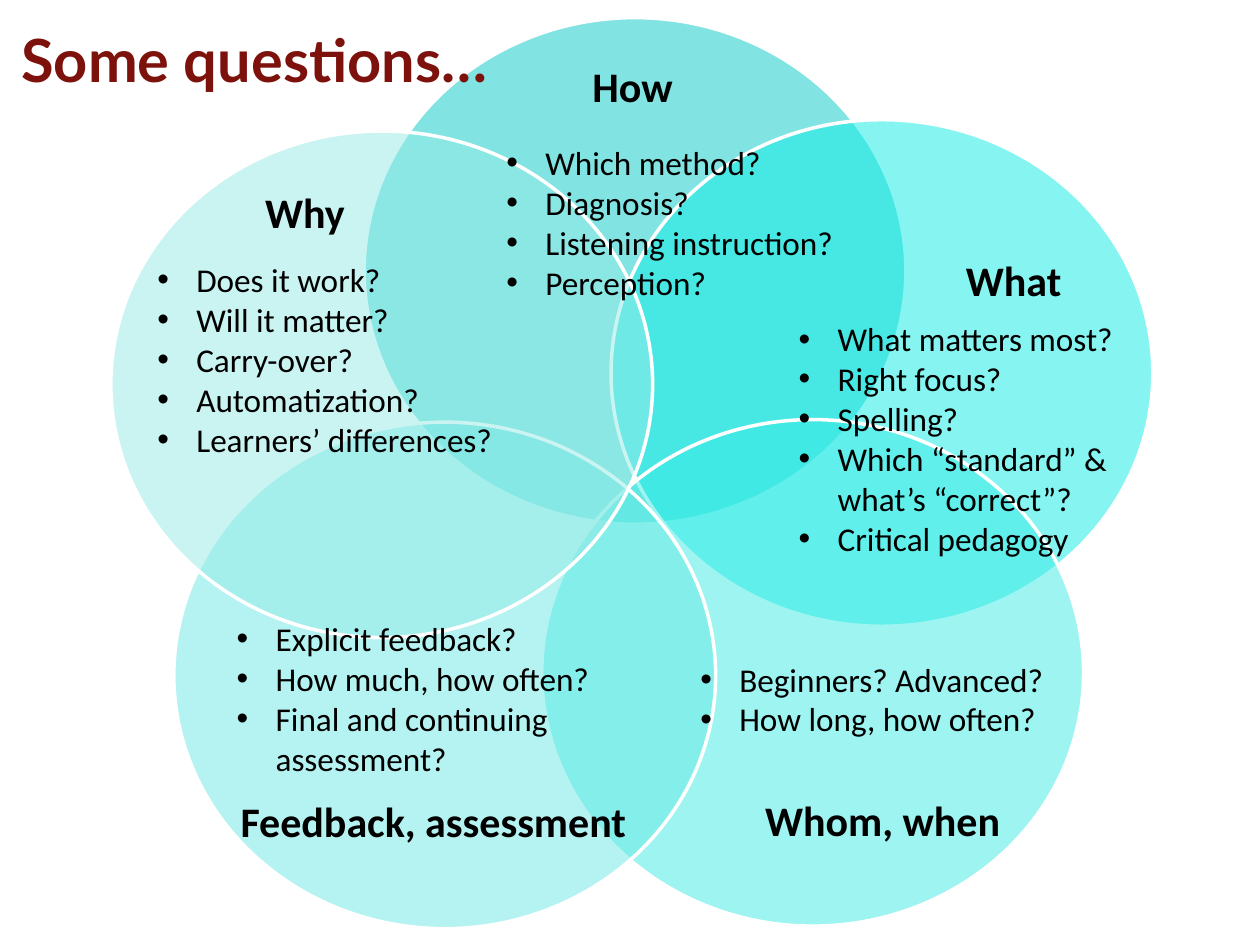
from lxml.etree import SubElement
from pptx import Presentation
from pptx.dml.color import RGBColor
from pptx.enum.shapes import MSO_SHAPE
from pptx.enum.text import MSO_ANCHOR, PP_ALIGN
from pptx.oxml.ns import qn
from pptx.util import Inches, Pt

WIDTH, HEIGHT = Inches(10), Inches(7.5)
CIRCLE_SIZE = (43, 53.6)
INDENT = Inches(0.31)

# Label, circle colour, circle corner, label box, list box, questions;
# all places are percentages of the slide's width and height
TOPICS = [
    ("How", "05CBC7", (28.9, 1.87), (45.5, 5.6, 9.4, 7.6),
     (39.2, 14.4, 30.8, 18.4),
     ["Which method?", "Diagnosis?", "Listening instruction?", "Perception?"]),
    ("What", "0FEDE7", (48.5, 12.67), (75.3, 24.8, 10.3, 10.27),
     (62.4, 33.07, 27.5, 26.93),
     ["What matters most?", "Right focus?", "Spelling?",
      "Which “standard” & what’s “correct”?", "Critical pedagogy"]),
    ("Whom, when", "3DEBE5", (43, 44.4), (59, 82.27, 22.1, 9.6),
     (54.6, 69.07, 31.7, 9.87),
     ["Beginners? Advanced?", "How long, how often?"]),
    ("Feedback, assessment", "6BE9E4", (13.8, 44.67), (18.9, 83.2, 31, 8),
     (17.8, 64.8, 32.1, 18.4),
     ["Explicit feedback?", "How much, how often?",
      "Final and continuing assessment?"]),
    ("Why", "96EAE6", (8.8, 13.87), (20.7, 18.27, 7, 8.93),
     (11.5, 26.8, 32.5, 22.67),
     ["Does it work?", "Will it matter?", "Carry-over?", "Automatization?",
      "Learners’ differences?"]),
]


def color(value):
    return RGBColor.from_string(value)


def place(x, y, w, h):
    """Turn percentages of the slide into left, top, width, height."""
    return [int(share * side / 100)
            for share, side in zip((x, y, w, h), (WIDTH, HEIGHT) * 2)]


def add_run(p, text, size, font="Calibri", fill="000000", bold=False):
    r = p.add_run()
    r.text = text
    r.font.size, r.font.name, r.font.bold = Pt(size), font, bold
    r.font.color.rgb = color(fill)


def add_title(s, text, box):
    sp = s.shapes.title
    sp.left, sp.top, sp.width, sp.height = place(*box)
    tf = sp.text_frame
    tf.word_wrap = False
    tf.vertical_anchor = MSO_ANCHOR.TOP
    p = tf.paragraphs[0]
    p.alignment = PP_ALIGN.LEFT
    add_run(p, text, 34, "Lato", "7D110C", True)
    # Bring the title in front of the circles
    s.shapes._spTree.append(sp._element)


def add_circle(s, corner, fill):
    sp = s.shapes.add_shape(MSO_SHAPE.OVAL, *place(*corner, *CIRCLE_SIZE))
    sp.shadow.inherit = False
    sp.fill.solid()
    sp.fill.fore_color.rgb = color(fill)
    clr = sp._element.spPr.find(qn("a:solidFill"))[0]
    SubElement(clr, qn("a:alpha"), val="50000")
    sp.line.color.rgb = color("FFFFFF")
    sp.line.width = Pt(2)


def add_label(s, text, box):
    tf = s.shapes.add_textbox(*place(*box)).text_frame
    tf.word_wrap = True
    tf.vertical_anchor = MSO_ANCHOR.MIDDLE
    tf.margin_left = tf.margin_top = tf.margin_right = tf.margin_bottom = 0
    p = tf.paragraphs[0]
    p.alignment = PP_ALIGN.CENTER
    p.line_spacing = 0.9
    add_run(p, text, 24, bold=True)


def add_bullets(s, items, box):
    tf = s.shapes.add_textbox(*place(*box)).text_frame
    tf.word_wrap = True
    for i, item in enumerate(items):
        p = tf.add_paragraph() if i else tf.paragraphs[0]
        pPr = p._p.get_or_add_pPr()
        pPr.set("marL", str(INDENT))
        pPr.set("indent", str(-INDENT))
        SubElement(pPr, qn("a:buFont"), typeface="Arial")
        SubElement(pPr, qn("a:buChar"), char="•")
        add_run(p, item, 19)


def main():
    prs = Presentation()
    prs.slide_width, prs.slide_height = WIDTH, HEIGHT
    s = prs.slides.add_slide(prs.slide_layouts[5])

    # Overlapping circles with their labels
    for label, fill, corner, label_box, _, _ in TOPICS:
        add_circle(s, corner, fill)
        add_label(s, label, label_box)

    # Questions on top of all circles
    for *_, list_box, questions in TOPICS:
        add_bullets(s, questions, list_box)

    add_title(s, "Some questions…", (0.7, 1.73, 41.6, 8.93))
    prs.save("out.pptx")


if __name__ == "__main__":
    main()
